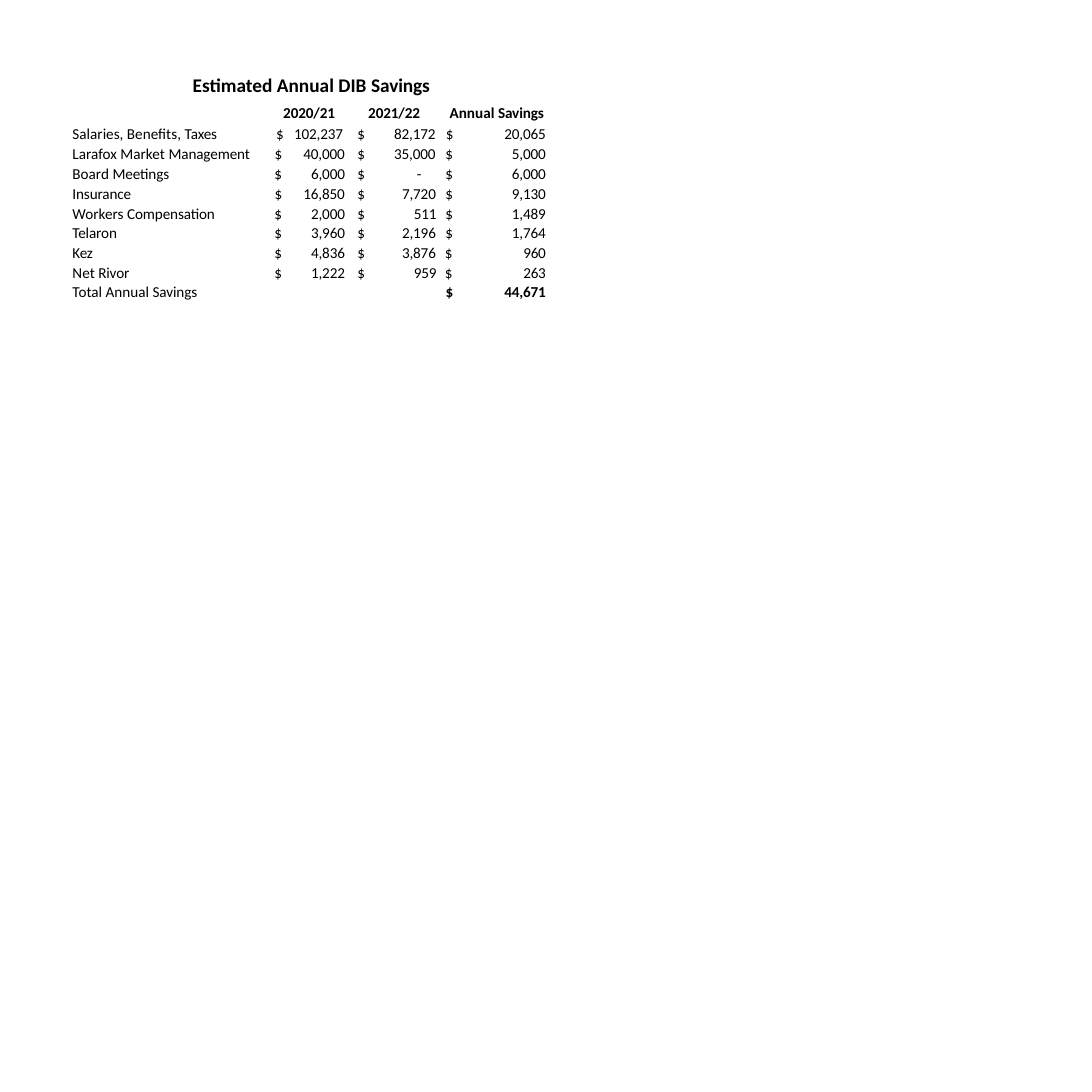
from dataclasses import dataclass
from typing import Optional

from lxml import etree
from pptx import Presentation
from pptx import util as u
from pptx.dml.color import RGBColor
from pptx.enum import text
from pptx.oxml.ns import qn

PX = 9144  # 100 px to the inch
LEFT, CENTER, RIGHT = text.PP_ALIGN.LEFT, text.PP_ALIGN.CENTER, text.PP_ALIGN.RIGHT
PLAIN_TABLE_STYLE = "{2D5ABB26-0587-4C30-8999-92F81FD0307C}"


@dataclass(frozen=True)
class Theme:
    font: str = "Calibri"
    ink: RGBColor = RGBColor(0, 0, 0)
    title_size: int = 14
    body_size: int = 11
    # Character spacing, in hundredths of a point
    plain: int = 0
    tight: int = -10
    tighter: int = -20
    symbol: int = -50


@dataclass(frozen=True)
class MoneyColumn:
    heading: str
    width: int
    heading_align: text.PP_ALIGN
    heading_indent: int
    heading_right: int
    align: text.PP_ALIGN
    indent: int
    right: int
    tab: int  # tab stop of a six-character amount


@dataclass(frozen=True)
class Row:
    label: str
    amounts: tuple[str, ...]
    height: int = 20
    leading: float = 12.2
    bold: bool = False


@dataclass(frozen=True)
class Format:
    align: text.PP_ALIGN = LEFT
    indent: int = 0
    right: int = 0
    leading: Optional[float] = None
    before: Optional[float] = None
    tab: Optional[int] = None
    size: int = Theme.body_size
    bold: bool = False


THEME = Theme()
TABLE_LEFT, TABLE_TOP = 70, 80
LABEL_WIDTH, LABEL_INDENT = 197, 3
TITLE_HEIGHT, HEADING_HEIGHT = 24, 23
TITLE = "Estimated Annual DIB Savings"
COLUMNS = (
    MoneyColumn("2020/21", 86, CENTER, 5, 2, CENTER, 4, 0, 29),
    MoneyColumn("2021/22", 88, LEFT, 18, 0, LEFT, 7, 0, 37),
    MoneyColumn("Annual Savings", 113, RIGHT, 0, 6, RIGHT, 0, 4, 59),
)
ROWS = (
    Row("Salaries, Benefits, Taxes", ("102,237", "82,172", "20,065"), 21, 12.8),
    Row("Larafox Market Management", ("40,000", "35,000", "5,000")),
    Row("Board Meetings", ("6,000", "-", "6,000")),
    Row("Insurance", ("16,850", "7,720", "9,130")),
    Row("Workers Compensation", ("2,000", "511", "1,489")),
    Row("Telaron", ("3,960", "2,196", "1,764")),
    Row("Kez", ("4,836", "3,876", "960")),
    Row("Net Rivor", ("1,222", "959", "263")),
    Row("Total Annual Savings", ("", "", "44,671"), 18, 11.8, True),
)
# Shift of the tab stop by the length of the amount
TAB_SHIFT = {7: -11, 6: 0, 5: 8, 3: 20, 1: 23}


def tracking(word: str) -> int:
    return THEME.tighter if len(word) <= 3 else THEME.tight


def word_runs(words: str) -> list[tuple[str, int]]:
    """Split off the last word, which is set tighter than the rest."""
    head, space, last = words.rpartition(" ")
    runs = [(head + space, THEME.plain)] if head else []
    return runs + [(last, tracking(last))]


def money_runs(amount: str) -> list[tuple[str, int]]:
    spacing = THEME.symbol if amount == "-" else tracking(amount)
    return [("$\t", THEME.symbol), (amount, spacing)]


def clear_cell(cell) -> None:
    cell.fill.background()
    cell.margin_left = cell.margin_right = cell.margin_top = cell.margin_bottom = 0
    end = cell.text_frame.paragraphs[0]._p.get_or_add_endParaRPr()
    end.set("sz", str(THEME.body_size * 100))


def write_cell(cell, runs: list[tuple[str, int]], fmt: Format) -> None:
    p = cell.text_frame.paragraphs[0]
    p.alignment = fmt.align
    if fmt.leading:
        p.line_spacing = u.Pt(fmt.leading)
    if fmt.before:
        p.space_before = u.Pt(fmt.before)
    props = p._p.get_or_add_pPr()
    if fmt.indent:
        props.set("marL", str(fmt.indent * PX))
    if fmt.right:
        props.set("marR", str(fmt.right * PX))
    if fmt.tab is not None:
        tabs = etree.SubElement(props, qn("a:tabLst"))
        etree.SubElement(tabs, qn("a:tab"), pos=str(fmt.tab * PX), algn="l")
    for words, spacing in runs:
        r = p.add_run()
        r.text = words
        r.font.name = THEME.font
        r.font.size = u.Pt(fmt.size)
        r.font.bold = fmt.bold
        r.font.color.rgb = THEME.ink
        r._r.get_or_add_rPr().set("spc", str(spacing))


def write_headings(table) -> None:
    table.cell(0, 0).merge(table.cell(0, len(COLUMNS)))
    write_cell(table.cell(0, 0), word_runs(TITLE),
               Format(indent=124, leading=13.3, size=THEME.title_size, bold=True))
    for i, column in enumerate(COLUMNS, start=1):
        cell = table.cell(1, i)
        cell.margin_top = PX
        write_cell(cell, word_runs(column.heading),
                   Format(column.heading_align, column.heading_indent, column.heading_right,
                          before=0.6, bold=True))


def write_row(table, index: int, row: Row) -> None:
    write_cell(table.cell(index, 0), word_runs(row.label),
               Format(indent=LABEL_INDENT, leading=row.leading))
    for i, (column, amount) in enumerate(zip(COLUMNS, row.amounts), start=1):
        if amount:
            write_cell(table.cell(index, i), money_runs(amount),
                       Format(column.align, column.indent, column.right, row.leading,
                              tab=column.tab + TAB_SHIFT[len(amount)], bold=row.bold))


def add_savings_table(s) -> None:
    widths = [LABEL_WIDTH, *(column.width for column in COLUMNS)]
    heights = [TITLE_HEIGHT, HEADING_HEIGHT, *(row.height for row in ROWS)]
    table = s.shapes.add_table(len(heights), len(widths), TABLE_LEFT * PX, TABLE_TOP * PX,
                               sum(widths) * PX, sum(heights) * PX).table
    table.first_row = table.horz_banding = False
    table._tbl.tblPr.find(qn("a:tableStyleId")).text = PLAIN_TABLE_STYLE
    for column, width in zip(table.columns, widths):
        column.width = width * PX
    for row, height in zip(table.rows, heights):
        row.height = height * PX
    for cell in table.iter_cells():
        clear_cell(cell)
    write_headings(table)
    for index, row in enumerate(ROWS, start=2):
        write_row(table, index, row)


def main() -> None:
    prs = Presentation()
    prs.slide_width = prs.slide_height = 1100 * PX
    s = prs.slides.add_slide(prs.slide_layouts[6])
    add_savings_table(s)
    prs.save("out.pptx")


if __name__ == "__main__":
    main()
